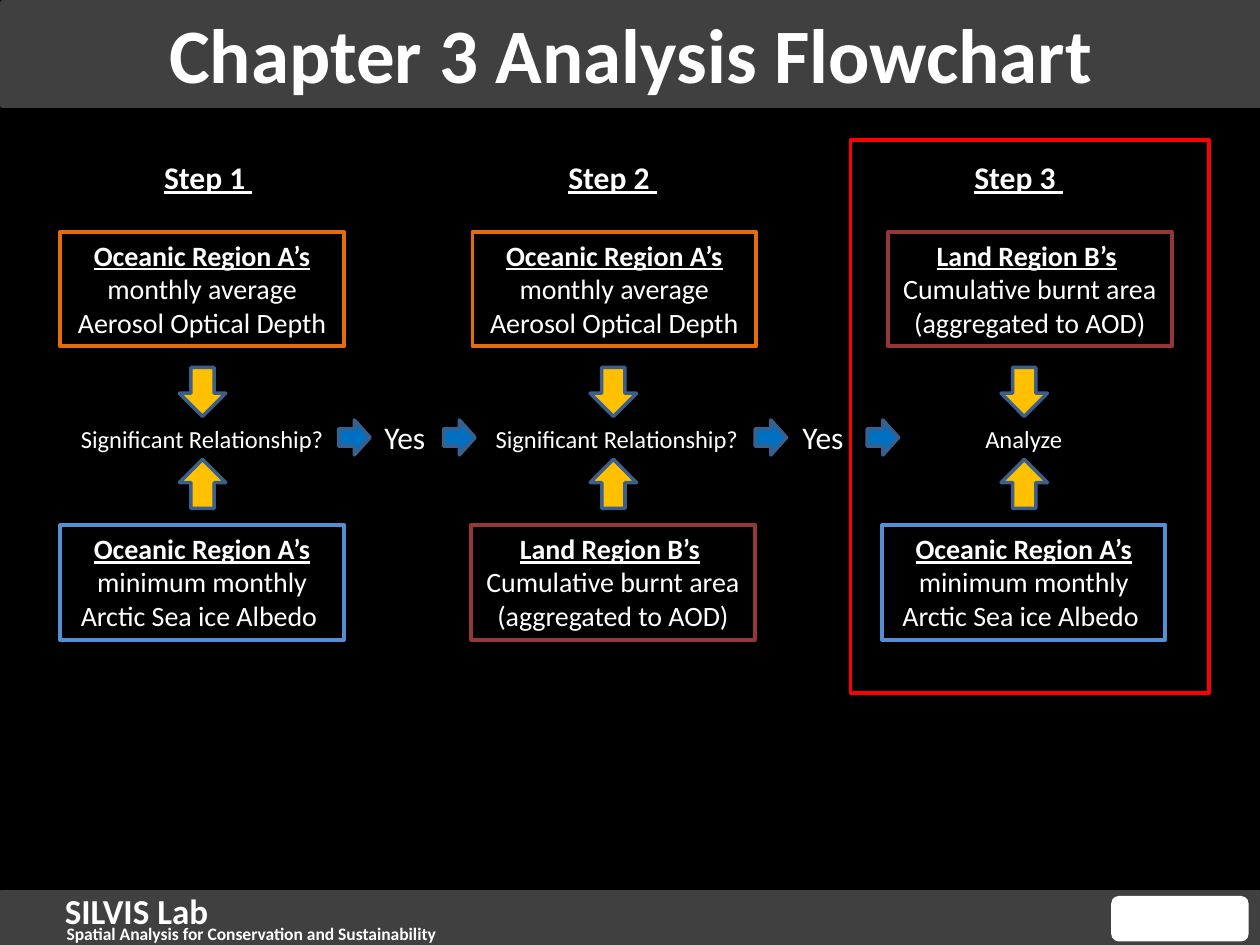
"""Build the Chapter 3 analysis flowchart slide."""
from dataclasses import dataclass
from typing import Optional

from pptx import Presentation
from pptx.dml.color import RGBColor
from pptx.enum.shapes import MSO_SHAPE as Shape
from pptx.enum.text import MSO_ANCHOR as Anchor, PP_ALIGN as Align
from pptx.util import Pt

WHITE = RGBColor(0xFF, 0xFF, 0xFF)
BLACK = RGBColor(0x00, 0x00, 0x00)
GRAY = RGBColor(0x40, 0x40, 0x40)
ORANGE = RGBColor(0xE4, 0x6C, 0x0A)
SKY = RGBColor(0x55, 0x8E, 0xD5)
MAROON = RGBColor(0x95, 0x37, 0x35)
GOLD = RGBColor(0xFF, 0xC0, 0x00)
BLUE = RGBColor(0x00, 0x70, 0xC0)
EDGE = RGBColor(0x3A, 0x5F, 0x8C)
RED = RGBColor(0xFF, 0x00, 0x00)
FONT = "Calibri"
PITCH = 234.75


@dataclass(frozen=True)
class Variable:
    region: str
    lines: tuple[str, ...]
    color: RGBColor


@dataclass(frozen=True)
class Step:
    heading: str
    heading_left: float
    top: Variable
    top_left: float
    bottom: Variable
    question: str
    question_left: float


AEROSOL = Variable("Oceanic Region A’s", (" monthly average Aerosol Optical Depth",), ORANGE)
ALBEDO = Variable("Oceanic Region A’s", (" minimum monthly Arctic Sea ice Albedo ",), SKY)
BURNT = Variable("Land Region B’s", (" ", "Cumulative burnt area", "(aggregated to AOD)"), MAROON)
ASK = "Significant Relationship? "
STEPS = (
    Step("Step 1 ", 41, AEROSOL, 34.5, ALBEDO, ASK, 37.5),
    Step("Step 2 ", 272, AEROSOL, 270, BURNT, ASK, 274.5),
    Step("Step 3 ", 504, BURNT, 507.5, ALBEDO, "Analyze", 507),
)
YES_LEFTS = (212.5, 451.5)
LINK_LEFTS = (193.5, 253.5, 431.5, 495.5)


def style(r, size: float, bold: bool = False, underline: bool = False) -> None:
    f = r.font
    f.name, f.size, f.bold, f.underline = FONT, Pt(size), bold, underline
    f.color.rgb = WHITE


def add_shape(s, kind, left: float, top: float, width: float, height: float,
              fill: Optional[RGBColor] = None, line: Optional[RGBColor] = None,
              weight: float = 2):
    sp = s.shapes.add_shape(kind, Pt(left), Pt(top), Pt(width), Pt(height))
    sp.shadow.inherit = False
    if fill is None:
        sp.fill.background()
    else:
        sp.fill.solid()
        sp.fill.fore_color.rgb = fill
    if line is None:
        sp.line.fill.background()
    else:
        sp.line.color.rgb = line
        sp.line.width = Pt(weight)
    return sp


def add_label(s, text: str, left: float, top: float, width: float, height: float,
              size: float, align=Align.LEFT, bold: bool = False,
              underline: bool = False) -> None:
    sp = s.shapes.add_textbox(Pt(left), Pt(top), Pt(width), Pt(height))
    tf = sp.text_frame
    tf.word_wrap = True
    tf.text = text
    p = tf.paragraphs[0]
    p.alignment = align
    style(p.runs[0], size, bold, underline)


def add_variable(s, var: Variable, left: float, top: float) -> None:
    sp = add_shape(s, Shape.RECTANGLE, left, top, 162, 65.5, line=var.color, weight=2.25)
    tf = sp.text_frame
    tf.word_wrap = True
    tf.vertical_anchor = Anchor.TOP
    tf.text = var.region
    p = tf.paragraphs[0]
    style(p.runs[0], 16, bold=True, underline=True)
    p.add_run().text = var.lines[0]
    style(p.runs[1], 16)
    for line in var.lines[1:]:
        p = tf.add_paragraph()
        p.text = line
        style(p.runs[0], 16)
    for p in tf.paragraphs:
        p.alignment = Align.CENTER


def add_step(s, step: Step, index: int) -> None:
    left = 34.5 + index * PITCH
    add_label(s, step.heading, step.heading_left, 86.5, 156, 29, 18, Align.CENTER, True, True)
    add_variable(s, step.top, step.top_left, 132.5)
    add_variable(s, step.bottom, left, 300)
    add_label(s, step.question, step.question_left, 238.5, 156, 24.5, 14, Align.CENTER)
    for top, turn in ((210, 0), (262.5, 180)):
        arrow = add_shape(s, Shape.DOWN_ARROW, left + 68, top, 26.5, 28, GOLD, EDGE)
        arrow.rotation = turn


def add_frame(s) -> None:
    add_shape(s, Shape.RECTANGLE, 1.5, 1.5, 718.5, 59, GRAY, GRAY, 3)
    add_shape(s, Shape.RECTANGLE, 0.75, 510, 718.5, 29.5, GRAY, GRAY, 3)
    add_label(s, "SILVIS Lab", 30, 505, 175, 31.5, 20, bold=True)
    add_label(s, "Spatial Analysis for Conservation and Sustainability",
              31, 524, 354, 12.5, 10, bold=True)
    add_shape(s, Shape.ROUNDED_RECTANGLE, 635, 512, 78.5, 26, WHITE)


def add_title(s, text: str) -> None:
    sp = s.shapes.title
    s.shapes.element.append(sp.element)
    sp.left, sp.top, sp.width, sp.height = Pt(1.5), Pt(0), Pt(718.5), Pt(60)
    tf = sp.text_frame
    tf.text = text
    tf.vertical_anchor = Anchor.MIDDLE
    p = tf.paragraphs[0]
    p.alignment = Align.CENTER
    style(p.runs[0], 44, bold=True)


def main() -> None:
    prs = Presentation()
    prs.slide_width, prs.slide_height = Pt(720), Pt(540)
    s = prs.slides.add_slide(prs.slide_layouts[5])
    s.background.fill.solid()
    s.background.fill.fore_color.rgb = BLACK
    add_frame(s)
    add_title(s, "Chapter 3 Analysis Flowchart")
    for i, step in enumerate(STEPS):
        add_step(s, step, i)
    for left in YES_LEFTS:
        add_label(s, "Yes", left, 235.5, 42, 29, 18)
    for left in LINK_LEFTS:
        add_shape(s, Shape.RIGHT_ARROW, left, 240, 18, 20, BLUE, EDGE)
    add_shape(s, Shape.RECTANGLE, 486, 80, 205, 316, line=RED)
    prs.save("out.pptx")


if __name__ == "__main__":
    main()
